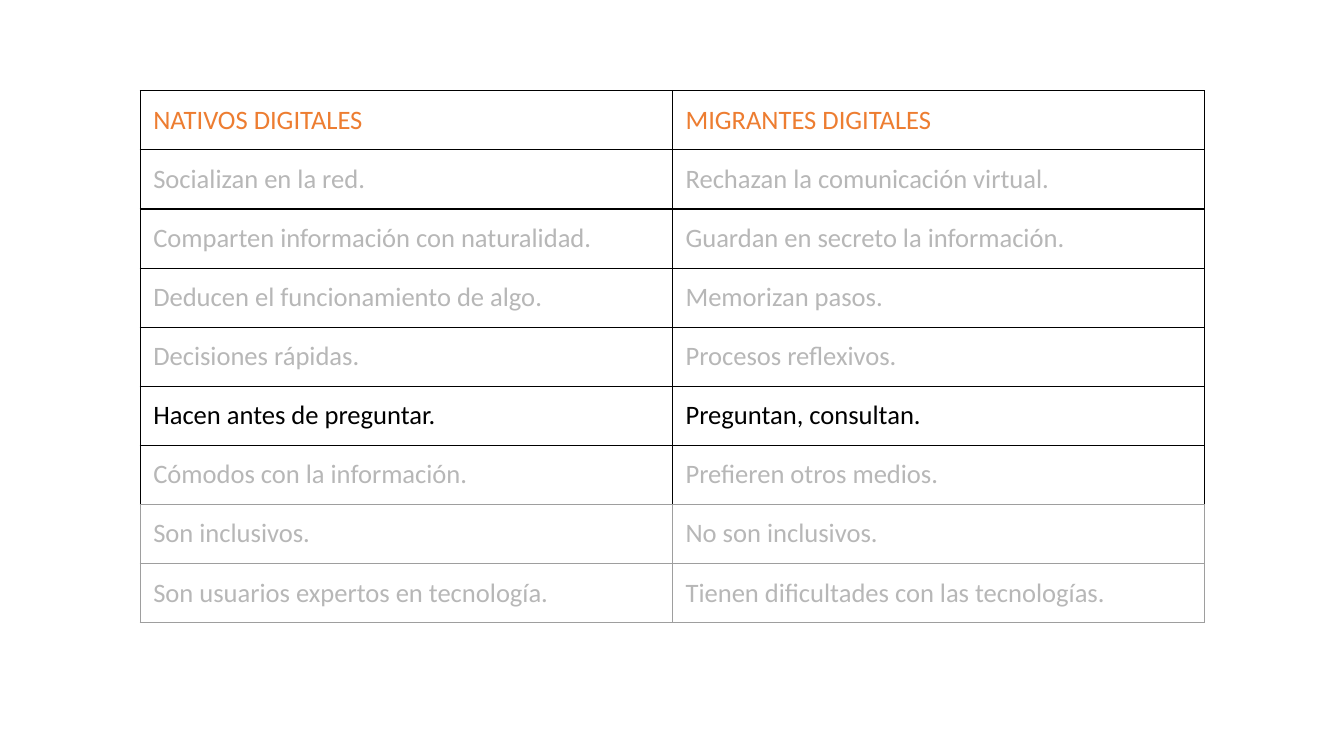
from dataclasses import dataclass

from lxml.etree import SubElement
from pptx import Presentation
from pptx.dml.color import RGBColor
from pptx.enum.text import MSO_ANCHOR
from pptx.oxml.ns import qn
from pptx.util import Inches, Pt


@dataclass(frozen=True)
class Theme:
    font: str = "Calibri"
    text_size: float = 19
    header: str = "ED7D31"
    muted: str = "B7B7B7"
    highlight: str = "000000"
    dark_border: tuple = ("000000", 1)
    light_border: tuple = ("9E9E9E", 0.75)


theme = Theme()

ROWS = [
    ("NATIVOS DIGITALES", "MIGRANTES DIGITALES"),
    ("Socializan en la red.", "Rechazan la comunicación virtual."),
    ("Comparten información con naturalidad.", "Guardan en secreto la información."),
    ("Deducen el funcionamiento de algo.", "Memorizan pasos."),
    ("Decisiones rápidas.", "Procesos reflexivos."),
    ("Hacen antes de preguntar.", "Preguntan, consultan."),
    ("Cómodos con la información.", "Prefieren otros medios."),
    ("Son inclusivos.", "No son inclusivos."),
    ("Son usuarios expertos en tecnología.", "Tienen dificultades con las tecnologías."),
]
HIGHLIGHT_ROW = 5
FIRST_LIGHT_ROW = 7
ROW_COLORS = {0: theme.header, HIGHLIGHT_ROW: theme.highlight}
CELL_FORMAT = {
    "margin_left": Inches(0.13),
    "margin_right": Inches(0.13),
    "margin_top": Inches(0.13),
    "margin_bottom": Inches(0.13),
    "vertical_anchor": MSO_ANCHOR.TOP,
}


def add_border(cell, side, border):
    color, width = border
    properties = cell._tc.get_or_add_tcPr()
    line = SubElement(properties, qn(f"a:ln{side}"), w=str(Pt(width)))
    fill = SubElement(line, qn("a:solidFill"))
    SubElement(fill, qn("a:srgbClr"), val=color)


# Slide
presentation = Presentation()
presentation.slide_width = Inches(13.33)
presentation.slide_height = Inches(7.5)
slide = presentation.slides.add_slide(presentation.slide_layouts[6])

# Comparison table
table = slide.shapes.add_table(
    len(ROWS), 2, Inches(1.39), Inches(0.9), Inches(10.56), Inches(5.28)
).table
table.first_row = False
table.horz_banding = False
for column in table.columns:
    column.width = Inches(5.28)

# Cell text and borders
for row_index, texts in enumerate(ROWS):
    table.rows[row_index].height = Inches(5.28 / len(ROWS))
    for column_index, text in enumerate(texts):
        cell = table.cell(row_index, column_index)
        for name, value in CELL_FORMAT.items():
            setattr(cell, name, value)

        run = cell.text_frame.paragraphs[0].add_run()
        run.text = text
        for name, value in {"name": theme.font, "size": Pt(theme.text_size)}.items():
            setattr(run.font, name, value)
        color = ROW_COLORS.get(row_index, theme.muted)
        run.font.color.rgb = RGBColor.from_string(color)

        for side in "LRTB":
            border_row = row_index + (side == "B")
            light = border_row >= FIRST_LIGHT_ROW
            add_border(cell, side, theme.light_border if light else theme.dark_border)
        cell.fill.background()

presentation.save("out.pptx")
